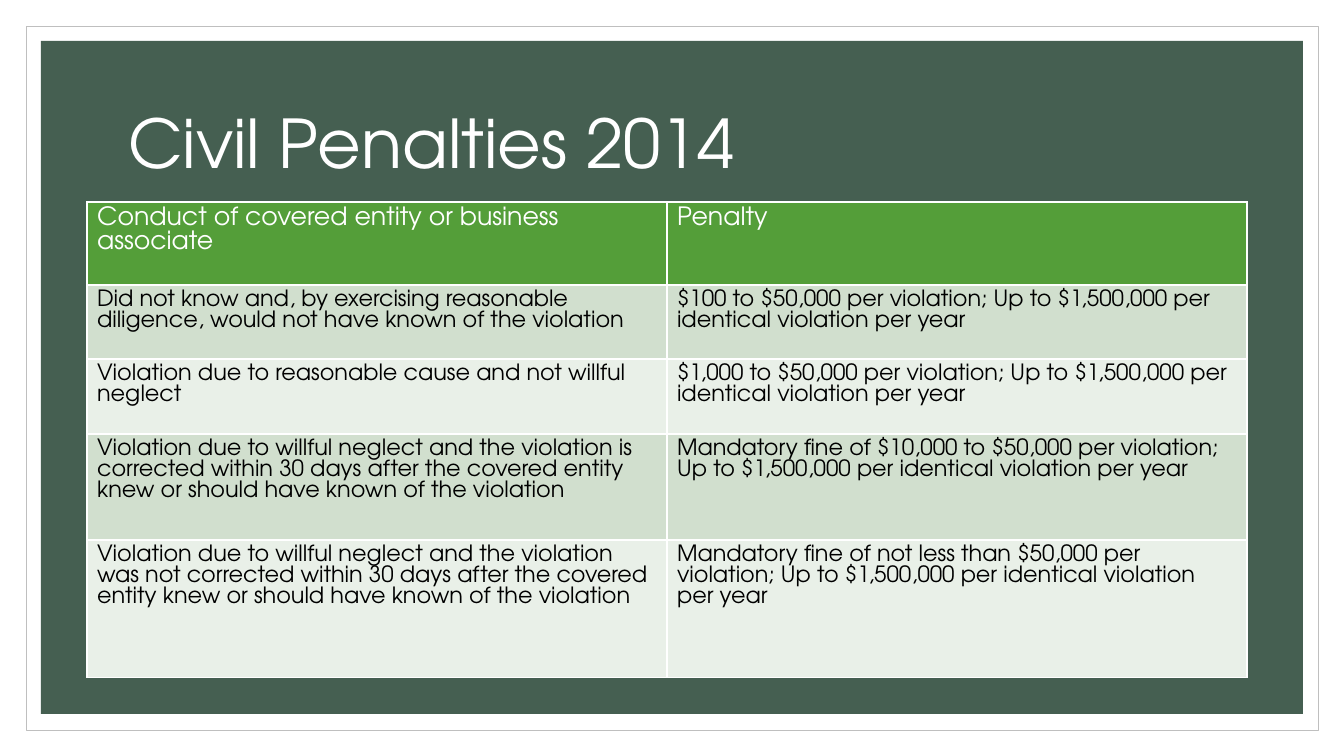
from lxml import etree
from pptx import Presentation
from pptx.dml.color import RGBColor as RGB
from pptx.enum.shapes import MSO_SHAPE as SHAPE
from pptx.enum.text import MSO_ANCHOR as ANCHOR, PP_ALIGN as ALIGN
from pptx.oxml.ns import qn
from pptx.util import Emu, Pt

# Content
TITLE = "Civil Penalties 2014"
ROWS = [
    ("Conduct of covered entity or business associate", "Penalty"),
    ("Did not know and, by exercising reasonable diligence, would not have "
     "known of the violation",
     "$100 to $50,000 per violation; Up to $1,500,000 per identical "
     "violation per year"),
    ("Violation due to reasonable cause and not willful neglect",
     "$1,000 to $50,000 per violation; Up to $1,500,000 per identical "
     "violation per year"),
    ("Violation due to willful neglect and the violation is corrected within "
     "30 days after the covered entity knew or should have known of the "
     "violation",
     "Mandatory fine of $10,000 to $50,000 per violation; Up to $1,500,000 "
     "per identical violation per year"),
    ("Violation due to willful neglect and the violation was not corrected "
     "within 30 days after the covered entity knew or should have known of "
     "the violation",
     "Mandatory fine of not less than $50,000 per violation; Up to "
     "$1,500,000 per identical violation per year"),
]

# Look
FONT = "TeX Gyre Adventor"
HEX = {"white": "FFFFFF", "black": "000000", "edge": "BFBFBF",
       "panel": "455F51", "head": "549E39", "odd": "D1DFCE", "even": "E9F0E8"}

# Places in px
SIZE = (1344, 756)
FRAME = (26, 26, 1292, 704)
PANEL = (41, 41, 1262, 673)
HEADING = (118, 71, 1109, 151)
GRID = (87, 202, 1160, 476)
HEIGHTS = (83, 74, 75, 106, 138)


def px(n):
    return Emu(round(n * 914400 / 100.8))


def color(name):
    return RGB.from_string(HEX[name])


def style(para, size, tone):
    para.font.name = FONT
    para.font.size = Pt(size)
    para.font.color.rgb = color(tone)


def block(slide, box, fill, edge=None):
    rect = slide.shapes.add_shape(SHAPE.RECTANGLE, *map(px, box))
    rect.shadow.inherit = False
    rect.fill.solid()
    rect.fill.fore_color.rgb = color(fill)
    if edge:
        rect.line.color.rgb = color(edge)
        rect.line.width = Pt(0.5)
    else:
        rect.line.fill.background()


def border(cell):
    props = cell._tc.get_or_add_tcPr()
    for i, side in enumerate(("lnL", "lnR", "lnT", "lnB")):
        line = etree.Element(qn("a:" + side), w=str(Pt(1)))
        fill = etree.SubElement(line, qn("a:solidFill"))
        etree.SubElement(fill, qn("a:srgbClr"), val=HEX["white"])
        props.insert(i, line)


deck = Presentation()
deck.slide_width, deck.slide_height = map(px, SIZE)
slide = deck.slides.add_slide(deck.slide_layouts[5])

# Backdrop
block(slide, FRAME, "white", "edge")
block(slide, PANEL, "panel")

# Title, brought in front of the backdrop
title = slide.shapes.title
slide.shapes._spTree.append(title._element)
title.left, title.top, title.width, title.height = map(px, HEADING)
title.text_frame.text = TITLE
title.text_frame.vertical_anchor = ANCHOR.MIDDLE
para = title.text_frame.paragraphs[0]
para.alignment = ALIGN.LEFT
para.line_spacing = 0.9
style(para, 48, "white")

# Table
table = slide.shapes.add_table(len(ROWS), 2, *map(px, GRID)).table
for col in table.columns:
    col.width = px(GRID[2] / 2)
for r, (texts, height) in enumerate(zip(ROWS, HEIGHTS)):
    table.rows[r].height = px(height)
    fill = "head" if r == 0 else "odd" if r % 2 else "even"
    for cell, text in zip(table.rows[r].cells, texts):
        cell.text = text
        cell.fill.solid()
        cell.fill.fore_color.rgb = color(fill)
        border(cell)
        para = cell.text_frame.paragraphs[0]
        style(para, 16 if r else 18, "black" if r else "white")
        para.font.bold = False

deck.save("out.pptx")
